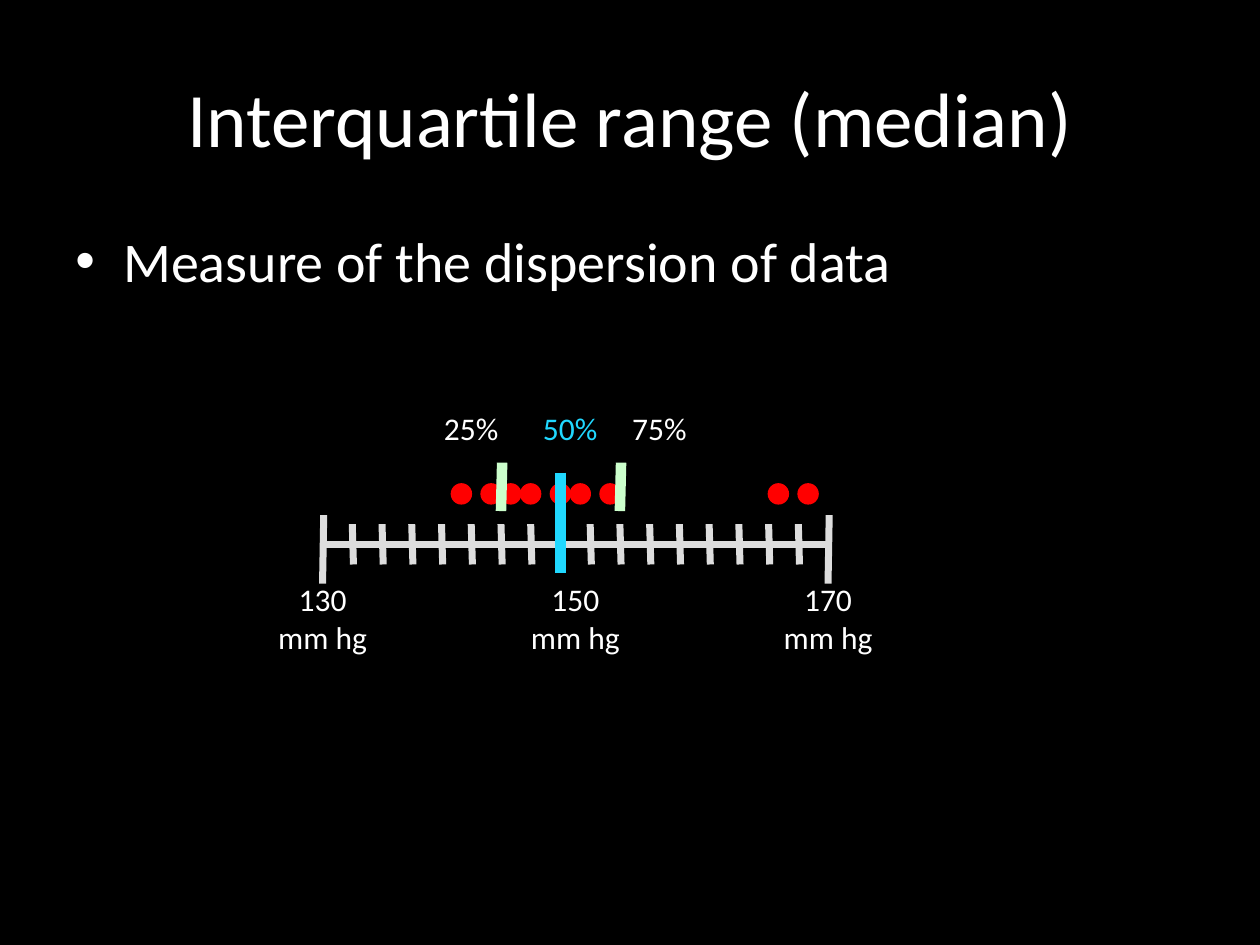
"""Build a slide that shows the interquartile range and median on a blood pressure scale."""
from dataclasses import dataclass

from lxml.etree import SubElement
from pptx import Presentation
from pptx.dml.color import RGBColor
from pptx.enum.shapes import MSO_CONNECTOR as Connector, MSO_SHAPE as Shape
from pptx.enum.text import MSO_ANCHOR as Anchor, MSO_AUTO_SIZE as AutoSize, PP_ALIGN as Align
from pptx.oxml.ns import qn
from pptx.util import Emu, Inches, Pt

COLORS = {
    "background": "000000",
    "text": "FFFFFF",
    "scale": "DDDDDD",
    "reading": "FF0000",
    "median": "20D8FF",
    "quartile": "CCFFCC",
}
FONT = "Calibri"
SCALE_LEFT, SCALE_Y = 2.56, 4.32
COLUMN, ROW = 0.236, 0.08
LAST_COLUMN = 17
LEAN = 0.04
DOT_SIZE = 0.16


@dataclass(frozen=True)
class Mark:
    """A line whose ends are in scale columns and rows from the axis."""
    start: tuple[float, float]
    end: tuple[float, float]
    color: str = "scale"
    weight: float = 4


@dataclass(frozen=True)
class Label:
    """Text centred on a scale column."""
    lines: str
    column: float
    row: float
    width: float
    height: float
    color: str = "text"
    wrap: bool = True


def rgb(name: str) -> RGBColor:
    """Return a named colour."""
    return RGBColor.from_string(COLORS[name])


def column_x(column: float) -> Emu:
    """Return the horizontal place of a scale column."""
    return Inches(SCALE_LEFT + column * COLUMN)


def row_y(row: float) -> Emu:
    """Return the vertical place of a row counted from the axis."""
    return Inches(SCALE_Y + row * ROW)


def add_text(slide, text: str, left: Emu, top: Emu, width: Emu, height: Emu,
             size: float, color: str = "text", align=Align.CENTER):
    """Add a wrapped text box and return its frame."""
    frame = slide.shapes.add_textbox(left, top, width, height).text_frame
    frame.word_wrap = True
    frame.text = text
    for paragraph in frame.paragraphs:
        paragraph.alignment = align
        for run in paragraph.runs:
            run.font.size = Pt(size)
            run.font.name = FONT
            run.font.color.rgb = rgb(color)
    return frame


def add_bullet(paragraph, indent: float) -> None:
    """Give a paragraph a hanging round bullet."""
    properties = paragraph._p.get_or_add_pPr()
    properties.set("marL", str(Inches(indent)))
    properties.set("indent", str(-Inches(indent)))
    SubElement(properties, qn("a:buFont"), typeface="Arial")
    SubElement(properties, qn("a:buChar"), char="•")


def draw_mark(slide, mark: Mark) -> None:
    """Draw one line of the scale."""
    (start_column, start_row), (end_column, end_row) = mark.start, mark.end
    line = slide.shapes.add_connector(
        Connector.STRAIGHT, column_x(start_column), row_y(start_row),
        column_x(end_column), row_y(end_row))
    line.line.color.rgb = rgb(mark.color)
    line.line.width = Pt(mark.weight)
    SubElement(line._element.spPr, qn("a:effectLst"))


def draw_reading(slide, column: float) -> None:
    """Draw one blood pressure reading above the axis."""
    size = Inches(DOT_SIZE)
    dot = slide.shapes.add_shape(
        Shape.OVAL, column_x(column) - size // 2, row_y(-5) - size // 2, size, size)
    dot.shadow.inherit = False
    dot.fill.solid()
    dot.fill.fore_color.rgb = rgb("reading")
    dot.line.color.rgb = rgb("reading")
    dot.line.width = Pt(0.75)


def draw_label(slide, label: Label) -> None:
    """Draw a label centred on its column."""
    width = Inches(label.width)
    frame = add_text(slide, label.lines, column_x(label.column) - width // 2,
                     row_y(label.row), width, Inches(label.height), 18, label.color)
    frame.word_wrap = label.wrap
    frame.auto_size = AutoSize.SHAPE_TO_FIT_TEXT


def main() -> None:
    """Compose and save the slide."""
    deck = Presentation()
    deck.slide_width, deck.slide_height = Inches(10), Inches(7.5)
    slide = deck.slides.add_slide(deck.slide_layouts[6])
    slide.background.fill.solid()
    slide.background.fill.fore_color.rgb = rgb("background")

    margin, content_width = int(deck.slide_width * 0.05), int(deck.slide_width * 0.9)
    title = add_text(slide, "Interquartile range (median)", margin,
                     int(deck.slide_height * 0.04), content_width, Inches(1.25), 44)
    title.vertical_anchor = Anchor.MIDDLE
    body = add_text(slide, "Measure of the dispersion of data", margin, Inches(1.75),
                    content_width, Inches(4.95), 32, align=Align.LEFT)
    body.paragraphs[0].space_before = Pt(6.4)
    add_bullet(body.paragraphs[0], 0.38)

    axis = Mark((0, 0), (LAST_COLUMN, 0))
    limits = [Mark((column + LEAN, -2.9), (column, 3.9)) for column in (0, LAST_COLUMN)]
    ticks = [Mark((column, -2), (column + LEAN, 2)) for column in range(1, LAST_COLUMN)]
    for mark in (axis, *limits, *ticks):
        draw_mark(slide, mark)

    for column in (4.67, 5.67, 6.33, 7, 8, 8.67, 9.67, 15.33, 16.33):
        draw_reading(slide, column)

    median = Mark((8, -7.1), (8, 2.8), "median", 6)
    quartiles = [Mark((column, -3.3), (column + LEAN, -8.1), "quartile", 6)
                 for column in (6, 10)]
    for mark in (median, *quartiles):
        draw_mark(slide, mark)

    pressures = [Label(f"{value}\nmm hg", column, 2.9, 1.18, 0.71)
                 for value, column in ((130, 0), (150, LAST_COLUMN / 2), (170, LAST_COLUMN))]
    shares = [Label(text, column, -14, 0.64, 0.4, color, False)
              for text, column, color in (("25%", 5, "text"), ("75%", 11.33, "text"),
                                          ("50%", 8.33, "median"))]
    for label in (*pressures, *shares):
        draw_label(slide, label)

    deck.save("out.pptx")


if __name__ == "__main__":
    main()
